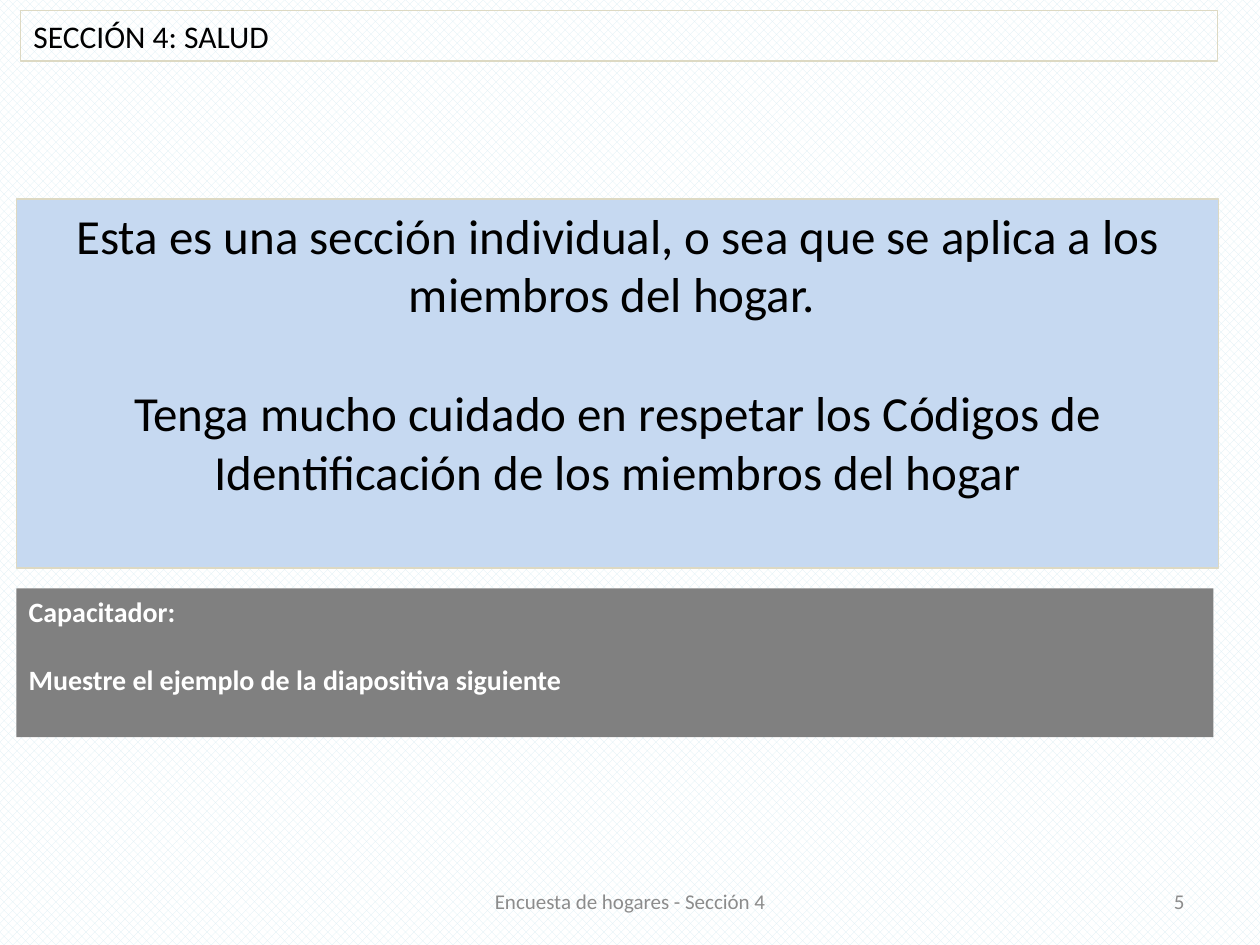
from pptx import Presentation
from pptx.dml.color import RGBColor
from pptx.enum.dml import MSO_PATTERN
from pptx.enum.shapes import MSO_SHAPE
from pptx.enum.text import MSO_ANCHOR, MSO_AUTO_SIZE, PP_ALIGN
from pptx.util import Cm, Pt

RECTANGLE = MSO_SHAPE.RECTANGLE
HALF_DOTS = MSO_PATTERN.PERCENT_50
TOP, MIDDLE = MSO_ANCHOR.TOP, MSO_ANCHOR.MIDDLE
LEFT, CENTER, RIGHT = PP_ALIGN.LEFT, PP_ALIGN.CENTER, PP_ALIGN.RIGHT
NO_AUTOFIT = MSO_AUTO_SIZE.NONE

FONT = "Calibri"
TITLE_ONLY_LAYOUT = 5
LINE_HEIGHT = 1.22
BLACK, WHITE, GRAY = "000000", "FFFFFF", "808080"
BORDER, LIGHT_BLUE, FOOTER_GRAY = "DDD9C3", "C6D9F1", "8C8C8C"
PALE_CYAN = "DBEEF4"


def color(value):
    return RGBColor.from_string(value)


def write_text(shape, texts, size, text_color, alignment=LEFT, anchor=TOP, bold=False):
    frame = shape.text_frame
    frame.word_wrap = True
    frame.auto_size = NO_AUTOFIT
    frame.vertical_anchor = anchor
    for index, text in enumerate(texts):
        paragraph = frame.add_paragraph() if index else frame.paragraphs[0]
        paragraph.alignment = alignment
        paragraph.space_before = Pt(round(size * LINE_HEIGHT, 1) if index else 0)
        run = paragraph.add_run()
        run.text = text
        run.font.name = FONT
        run.font.size = Pt(size)
        run.font.bold = bold
        run.font.color.rgb = color(text_color)


def outline(shape):
    shape.line.color.rgb = color(BORDER)
    shape.line.width = Pt(0.75)


def set_background(slide):
    fill = slide.background.fill
    fill.patterned()
    fill.pattern = HALF_DOTS
    fill.fore_color.rgb = color(PALE_CYAN)
    fill.back_color.rgb = color(WHITE)


def add_title(slide, text):
    title = slide.shapes.title
    title.left, title.top = Cm(0.42), Cm(0.21)
    title.width, title.height = Cm(24.13), Cm(1.02)
    outline(title)
    write_text(title, [text], 18, BLACK)


def add_panel(slide, top, width, height, fill_color):
    panel = slide.shapes.add_shape(RECTANGLE, Cm(0.33), Cm(top), Cm(width), Cm(height))
    panel.shadow.inherit = False
    panel.fill.solid()
    panel.fill.fore_color.rgb = color(fill_color)
    panel.line.fill.background()
    return panel


def add_footer_text(slide, left, width, text, alignment):
    box = slide.shapes.add_textbox(Cm(left), Cm(17.65), Cm(width), Cm(1.02))
    write_text(box, [text], 12, FOOTER_GRAY, alignment, MIDDLE)


def main():
    presentation = Presentation()
    presentation.slide_width, presentation.slide_height = Cm(25.4), Cm(19.05)
    slide = presentation.slides.add_slide(presentation.slide_layouts[TITLE_ONLY_LAYOUT])
    set_background(slide)

    add_footer_text(slide, 8.68, 8.05, "Encuesta de hogares - Sección 4", CENTER)
    add_footer_text(slide, 18.2, 5.93, "5", RIGHT)
    add_title(slide, "SECCIÓN 4: SALUD")

    message = add_panel(slide, 4.01, 24.23, 7.44, LIGHT_BLUE)
    outline(message)
    write_text(message, [
        "Esta es una sección individual, o sea que se aplica a los miembros del hogar. ",
        "Tenga mucho cuidado en respetar los Códigos de Identificación de los miembros del hogar",
    ], 28, BLACK, CENTER)

    trainer_note = add_panel(slide, 11.86, 24.13, 3, GRAY)
    write_text(trainer_note, [
        "Capacitador:",
        "Muestre el ejemplo de la diapositiva siguiente",
    ], 16, WHITE, bold=True)

    presentation.save("out.pptx")


if __name__ == "__main__":
    main()
